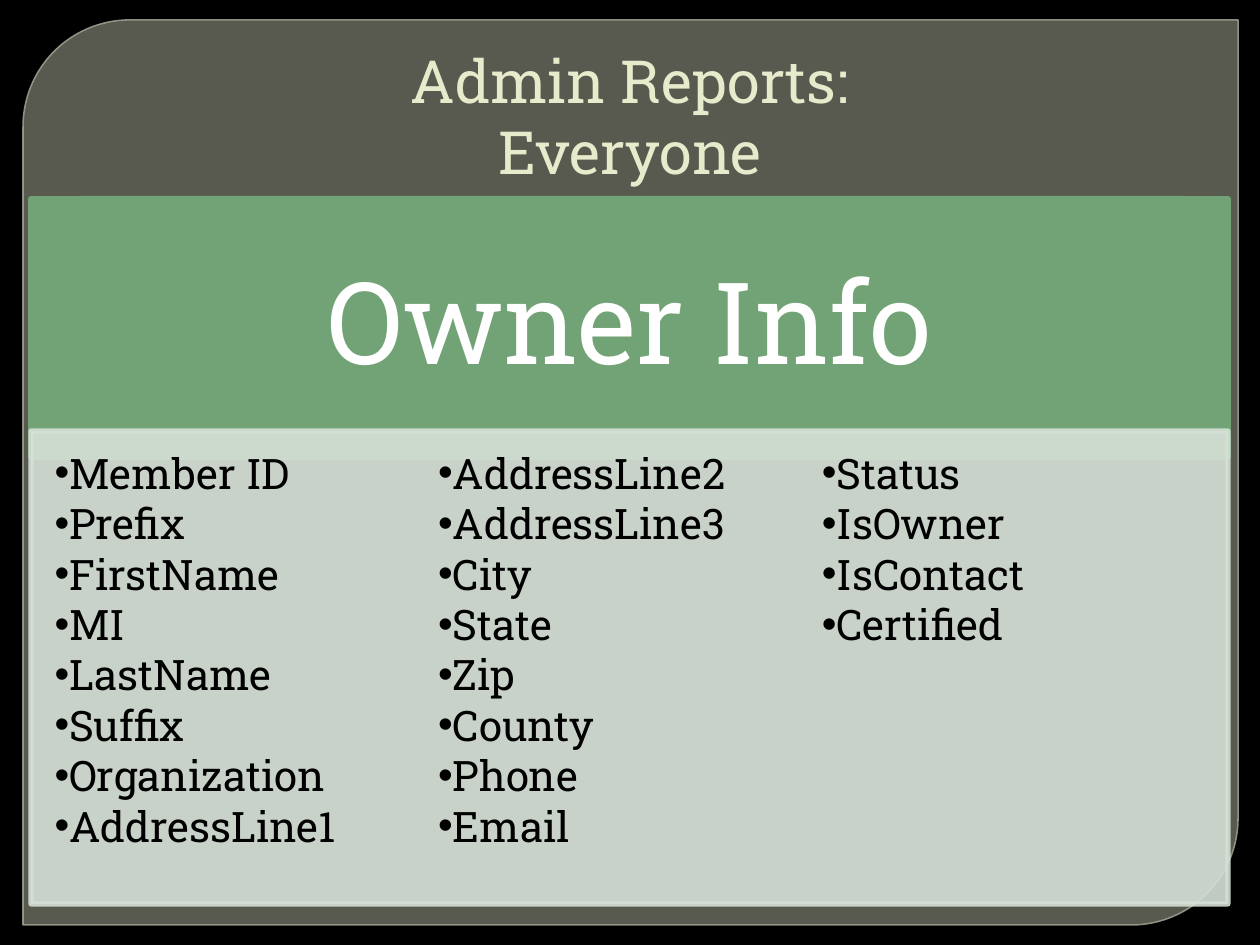
from copy import deepcopy

from lxml import etree
from pptx import Presentation
from pptx import util as u
from pptx.dml.color import RGBColor
from pptx.enum import shapes, text
from pptx.oxml.ns import qn

BLACK = RGBColor(0x00, 0x00, 0x00)
WHITE = RGBColor(0xFF, 0xFF, 0xFF)
CREAM = RGBColor(0xE7, 0xEA, 0xCB)
OLIVE = RGBColor(0x88, 0x8B, 0x7B)
OLIVE_EDGE = RGBColor(0x9D, 0xA0, 0x90)
GREEN = RGBColor(0x72, 0xA3, 0x76)
PALE_GREEN = RGBColor(0xD5, 0xE0, 0xD6)

PX_PER_INCH = 126
FONT = "Roboto Slab"
FIELDS = [
    "Member ID", "Prefix", "FirstName", "MI", "LastName", "Suffix",
    "Organization", "AddressLine1", "AddressLine2", "AddressLine3", "City",
    "State", "Zip", "County", "Phone", "Email", "Status", "IsOwner",
    "IsContact", "Certified",
]


def px(length):
    return u.Inches(length / PX_PER_INCH)


def set_opacity(color_format_parent, percent):
    """Add an alpha value to the first solid colour below an element."""
    color = next(color_format_parent.iter(qn("a:srgbClr")))
    etree.SubElement(color, qn("a:alpha"), val=str(percent * 1000))


def add_bullet(paragraph):
    properties = paragraph._p.get_or_add_pPr()
    properties.set("marL", "0")
    properties.set("indent", "0")
    etree.SubElement(properties, qn("a:buFont"), typeface="Arial")
    etree.SubElement(properties, qn("a:buChar"), char="•")


def write(shape, lines, size, color, align=text.PP_ALIGN.LEFT,
          anchor=text.MSO_ANCHOR.TOP, spacing=1.0, bullets=False):
    """Fill a shape with one paragraph per line; a newline is a line break."""
    frame = shape.text_frame
    frame.word_wrap = True
    frame.auto_size = text.MSO_AUTO_SIZE.NONE
    frame.vertical_anchor = anchor
    for index, line in enumerate(lines):
        paragraph = frame.add_paragraph() if index else frame.paragraphs[0]
        paragraph.text = line
        paragraph.alignment = align
        paragraph.line_spacing = spacing
        paragraph.space_before = paragraph.space_after = u.Pt(0)
        if bullets:
            add_bullet(paragraph)
        for run in paragraph.runs:
            run.font.name = FONT
            run.font.size = u.Pt(size)
            run.font.color.rgb = color
        for line_break in paragraph._p.findall(qn("a:br")):
            line_break.append(deepcopy(paragraph.runs[0].font._element))


class SlideBuilder:
    """Holds the current slide and adds styled elements to it."""

    def __init__(self, slide):
        self.slide = slide
        slide.background.fill.solid()
        slide.background.fill.fore_color.rgb = BLACK

    def panel(self, box, fill, line=None, width=3, fill_opacity=100,
              line_opacity=100, kind=shapes.MSO_SHAPE.RECTANGLE):
        shape = self.slide.shapes.add_shape(kind, *map(px, box))
        shape.shadow.inherit = False
        shape.fill.solid()
        shape.fill.fore_color.rgb = fill
        if fill_opacity < 100:
            set_opacity(shape.element.spPr.find(qn("a:solidFill")), fill_opacity)
        if line is None:
            shape.line.fill.background()
            return shape
        shape.line.color.rgb = line
        shape.line.width = u.Pt(width)
        if line_opacity < 100:
            set_opacity(shape.element.spPr.find(qn("a:ln")), line_opacity)
        return shape

    def placeholder(self, index, box):
        """Move a placeholder to its box and to the front."""
        shape = self.slide.placeholders[index]
        shape.left, shape.top, shape.width, shape.height = map(px, box)
        shape.element.getparent().append(shape.element)
        return shape

    def title(self, box, wording):
        write(self.placeholder(0, box), [wording], 34, CREAM,
              align=text.PP_ALIGN.CENTER, anchor=text.MSO_ANCHOR.BOTTOM)

    def bullet_list(self, box, items, columns):
        shape = self.placeholder(1, box)
        write(shape, items, 24, BLACK, bullets=True)
        shape.text_frame._txBody.bodyPr.set("numCol", str(columns))


def main():
    presentation = Presentation()
    presentation.slide_width = px(1260)
    presentation.slide_height = px(945)
    layout = presentation.slide_layouts[1]
    builder = SlideBuilder(presentation.slides.add_slide(layout))

    frame = builder.panel((23, 20, 1215, 905), OLIVE, OLIVE_EDGE, width=0.87,
                          fill_opacity=65, line_opacity=88,
                          kind=shapes.MSO_SHAPE.ROUND_2_DIAG_RECTANGLE)
    frame.adjustments[0] = 0.118
    frame.adjustments[1] = 0
    builder.panel((81, 196, 1103, 1), GREEN)
    builder.title((0, 31, 1260, 162), "Admin Reports:\nEveryone")

    heading = builder.panel((31, 199, 1197, 258), GREEN, GREEN)
    write(heading, ["Owner Info"], 65, WHITE, align=text.PP_ALIGN.CENTER,
          anchor=text.MSO_ANCHOR.MIDDLE, spacing=0.9)
    builder.panel((31, 431, 1197, 473), PALE_GREEN, PALE_GREEN,
                  fill_opacity=90, line_opacity=90)
    builder.bullet_list((42, 441, 1176, 420), FIELDS, columns=3)

    presentation.save("out.pptx")


if __name__ == "__main__":
    main()
